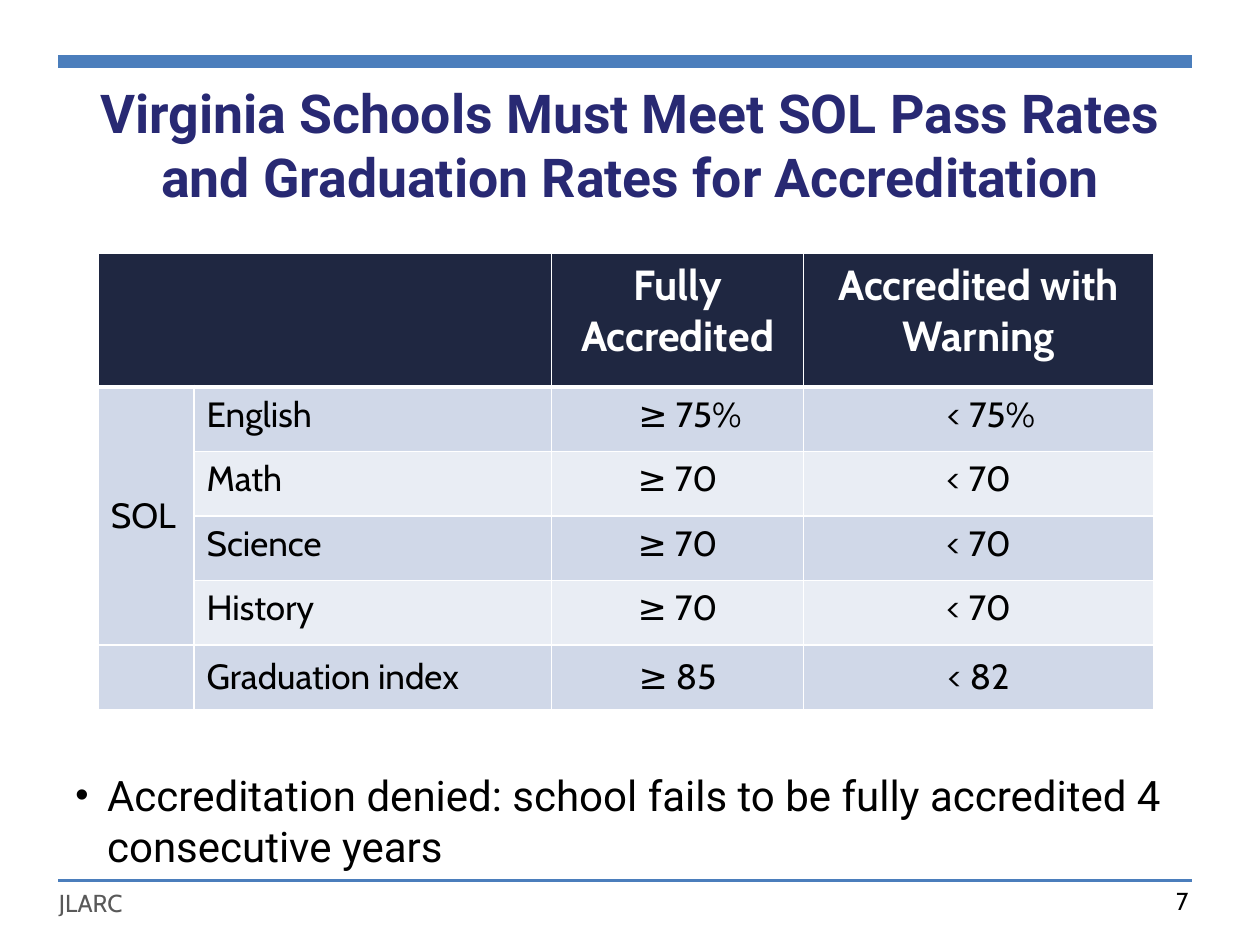
from dataclasses import dataclass

import pptx
import pptx.dml.color
import pptx.enum.shapes
import pptx.enum.text
import pptx.oxml
import pptx.oxml.ns
import pptx.util

Cm = pptx.util.Cm
Pt = pptx.util.Pt
RGBColor = pptx.dml.color.RGBColor
ALIGN = pptx.enum.text.PP_ALIGN
ANCHOR = pptx.enum.text.MSO_ANCHOR

RULE_BLUE = RGBColor(0x4B, 0x7E, 0xBC)
TITLE_BLUE = RGBColor(0x28, 0x29, 0x73)
HEADER_NAVY = RGBColor(0x1F, 0x27, 0x41)
BAND_DARK = RGBColor(0xD0, 0xD8, 0xE8)
BAND_LIGHT = RGBColor(0xE9, 0xED, 0xF4)
GRAY = RGBColor(0x59, 0x59, 0x59)
BLACK = RGBColor(0, 0, 0)
WHITE = RGBColor(0xFF, 0xFF, 0xFF)


@dataclass(frozen=True)
class Style:
    font: str
    size: float
    color: RGBColor
    bold: bool = False
    align: ALIGN = ALIGN.LEFT


@dataclass(frozen=True)
class Label:
    text: str
    left: float
    top: float
    width: float
    height: float
    style: Style
    anchor: ANCHOR = ANCHOR.TOP


@dataclass(frozen=True)
class Rule:
    y: float
    weight: float


@dataclass(frozen=True)
class Standard:
    subject: str
    full: str
    warning: str
    color: RGBColor
    anchor: ANCHOR = ANCHOR.TOP
    shift: float = 0


HEADER = Style("Cabin", 24, WHITE, True, ALIGN.CENTER)
SUBJECT = Style("Cabin", 20, BLACK)
RATE = Style("Cabin", 20, BLACK, align=ALIGN.CENTER)

RULES = [Rule(1.24, 7), Rule(17.75, 2)]
LABELS = [
    Label("JLARC", 0.94, 17.78, 6.07, 0.86, Style("Cabin", 14, GRAY)),
    Label("Virginia Schools Must Meet SOL Pass Rates and Graduation Rates for Accreditation",
          1.27, 1.42, 22.86, 2.97,
          Style("Roboto", 30.6, TITLE_BLUE, True, ALIGN.CENTER), ANCHOR.MIDDLE),
    Label("7", 18.29, 17.73, 5.92, 1.02, Style("Cabin", 14, BLACK, align=ALIGN.RIGHT)),
]
DENIED = Label("Accreditation denied: school fails to be fully accredited 4 consecutive years",
               1.27, 15.39, 22.86, 2.31, Style("Roboto", 24, BLACK))
STANDARDS = [
    Standard("English", "≥ 75%", "< 75%", BAND_DARK, shift=0.5),
    Standard("Math", "≥ 70", "< 70", BAND_LIGHT),
    Standard("Science", "≥ 70", "< 70", BAND_DARK),
    Standard("History", "≥ 70", "< 70", BAND_LIGHT),
    Standard("Graduation index", "≥ 85", "< 82", BAND_DARK, ANCHOR.MIDDLE),
]
COL_WIDTHS = [1.93, 7.21, 5.08, 7.06]
HEADER_HEIGHT, ROW_HEIGHT = 2.69, 1.3


def write(tf, text: str, style: Style):
    p = tf.paragraphs[0]
    p.alignment = style.align
    r = p.add_run()
    r.text = text
    r.font.name = style.font
    r.font.size = Pt(style.size)
    r.font.bold = style.bold
    r.font.color.rgb = style.color
    return p


def add_rule(s, rule: Rule) -> None:
    cxn = s.shapes.add_connector(pptx.enum.shapes.MSO_CONNECTOR.STRAIGHT,
                                 Cm(1.17), Cm(rule.y), Cm(24.03), Cm(rule.y))
    cxn.line.color.rgb = RULE_BLUE
    cxn.line.width = Pt(rule.weight)
    pptx.oxml.ns.qn("a:effectLst")
    cxn._element.spPr.append(pptx.oxml.parse_xml(
        f"<a:effectLst {pptx.oxml.ns.nsdecls('a')}/>"))


def add_label(s, label: Label):
    sp = s.shapes.add_textbox(Cm(label.left), Cm(label.top), Cm(label.width), Cm(label.height))
    tf = sp.text_frame
    tf.word_wrap = True
    tf.vertical_anchor = label.anchor
    return write(tf, label.text, label.style)


def add_bullet(p) -> None:
    pPr = p._p.get_or_add_pPr()
    pPr.set("marL", str(Cm(0.64)))
    pPr.set("indent", str(-Cm(0.64)))
    p.space_after = Pt(6)
    for tag in ('buSzPct val="90000"', 'buFont typeface="Arial"', 'buChar char="•"'):
        pPr.append(pptx.oxml.parse_xml(f"<a:{tag} {pptx.oxml.ns.nsdecls('a')}/>"))


def format_cell(cell, fill: RGBColor, top: float = 1, bottom: float = 1) -> None:
    cell.fill.solid()
    cell.fill.fore_color.rgb = fill
    tcPr = cell._tc.get_or_add_tcPr()
    for i, (side, weight) in enumerate(zip("LRTB", (1, 1, top, bottom))):
        tcPr.insert(i, pptx.oxml.parse_xml(
            f'<a:ln{side} {pptx.oxml.ns.nsdecls("a")} w="{Pt(weight)}">'
            f'<a:solidFill><a:srgbClr val="{WHITE}"/></a:solidFill></a:ln{side}>'))


def add_standards(s) -> None:
    height = HEADER_HEIGHT + ROW_HEIGHT * len(STANDARDS)
    table = s.shapes.add_table(len(STANDARDS) + 1, len(COL_WIDTHS), Cm(1.98), Cm(5.11),
                               Cm(sum(COL_WIDTHS)), Cm(height)).table
    for col, width in zip(table.columns, COL_WIDTHS):
        col.width = Cm(width)
    for i, row in enumerate(table.rows):
        row.height = Cm(ROW_HEIGHT if i else HEADER_HEIGHT)

    for j in range(len(COL_WIDTHS)):
        format_cell(table.cell(0, j), HEADER_NAVY, bottom=3)
    table.cell(0, 0).merge(table.cell(0, 1))
    for j, text in enumerate(("Fully Accredited", "Accredited with Warning"), 2):
        write(table.cell(0, j).text_frame, text, HEADER)

    for i, std in enumerate(STANDARDS, 1):
        top = 3 if i == 1 else 1
        format_cell(table.cell(i, 0), BAND_DARK, top)
        for j, text in enumerate((std.subject, std.full, std.warning), 1):
            cell = table.cell(i, j)
            format_cell(cell, std.color, top)
            cell.vertical_anchor = std.anchor
            if j > 1:
                cell.margin_left = Cm(0.25 + std.shift)
            write(cell.text_frame, text, RATE if j > 1 else SUBJECT)
    sol = table.cell(1, 0)
    sol.merge(table.cell(4, 0))
    sol.vertical_anchor = ANCHOR.MIDDLE
    write(sol.text_frame, "SOL", SUBJECT)


def main() -> None:
    prs = pptx.Presentation()
    prs.slide_width, prs.slide_height = Cm(25.4), Cm(19.05)
    s = prs.slides.add_slide(prs.slide_layouts[6])
    for rule in RULES:
        add_rule(s, rule)
    for label in LABELS:
        add_label(s, label)
    add_standards(s)
    add_bullet(add_label(s, DENIED))
    prs.save("out.pptx")


if __name__ == "__main__":
    main()
